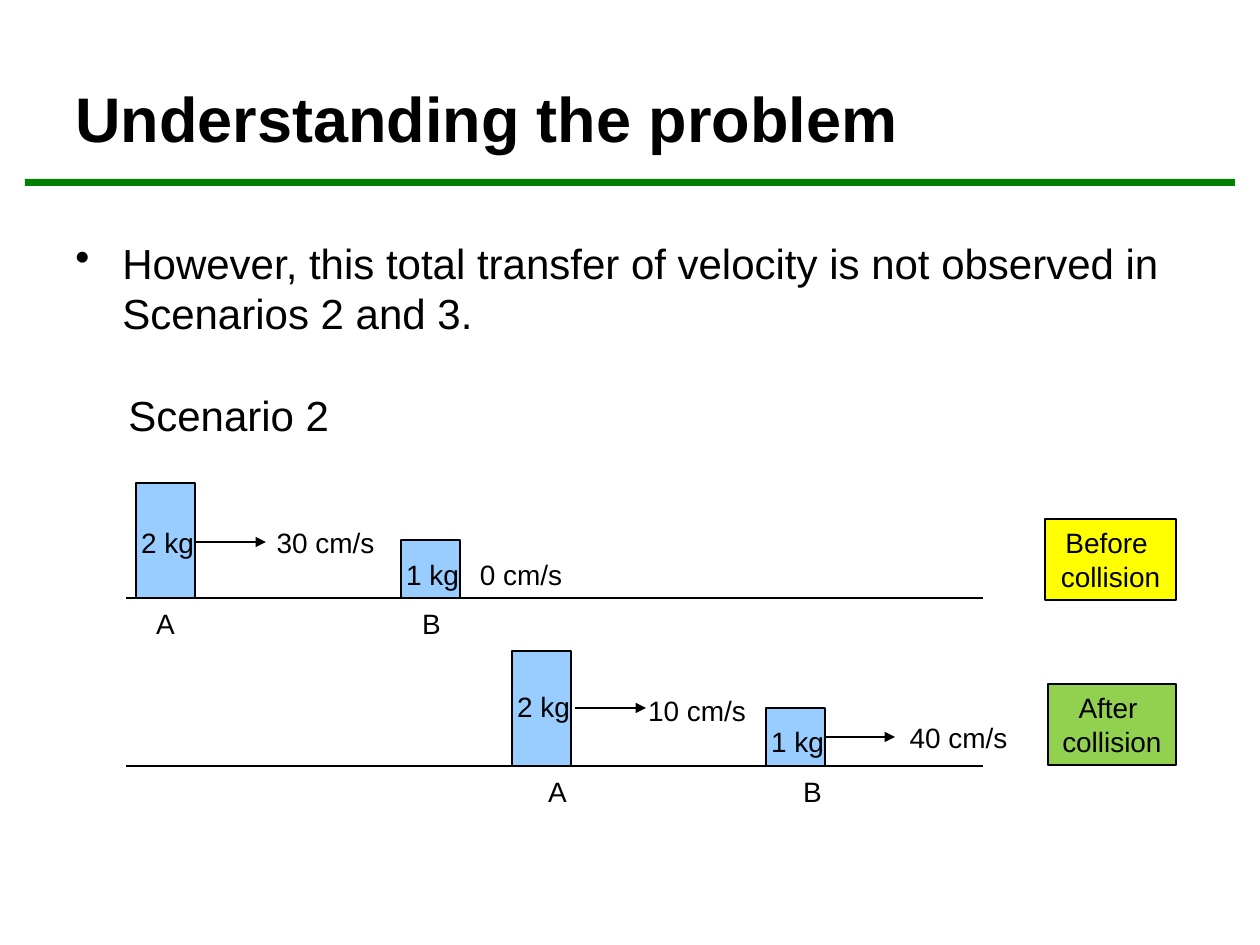
"""Build the slide on the Scenario 2 collision."""
from dataclasses import dataclass

from lxml import etree
from pptx import Presentation
from pptx import util as u
from pptx.dml.color import RGBColor
from pptx.enum import shapes, text
from pptx.oxml.ns import qn


@dataclass(frozen=True)
class Theme:
    font: str = "Arial"
    ink: str = "000000"
    rule: str = "008000"
    block: str = "99CCFF"
    before: str = "FFFF00"
    after: str = "92D050"
    title: int = 36
    body: int = 24
    label: int = 16
    line: float = 0.75


def px(n):
    return u.Emu(round(n * 914400 / 126))


def write(tf, content, theme, size, bold=False, center=False, wrap=True,
          anchor=text.MSO_ANCHOR.TOP, bullet=None, hang=0):
    tf.word_wrap = wrap
    tf.vertical_anchor = anchor
    for i, line in enumerate(content.split("\n")):
        p = tf.paragraphs[0] if i == 0 else tf.add_paragraph()
        p.alignment = text.PP_ALIGN.CENTER if center else text.PP_ALIGN.LEFT
        if bullet:
            pPr = p._p.get_or_add_pPr()
            pPr.set("marL", str(px(hang)))
            pPr.set("indent", str(-px(hang)))
            etree.SubElement(pPr, qn("a:buChar")).set("char", bullet)
        r = p.add_run()
        r.text = line
        r.font.name = theme.font
        r.font.size = u.Pt(size)
        r.font.bold = bold
        r.font.color.rgb = RGBColor.from_string(theme.ink)


class Deck:
    def __init__(self, theme):
        self.theme = theme
        self.prs = Presentation()
        self.prs.slide_width, self.prs.slide_height = px(1260), px(945)
        self.s = self.prs.slides.add_slide(self.prs.slide_layouts[6])

    def text(self, x, y, w, h, content, size, **fmt):
        sp = self.s.shapes.add_textbox(px(x), px(y), px(w), px(h))
        write(sp.text_frame, content, self.theme, size, **fmt)

    def label(self, x, y, w, h, content):
        self.text(x, y, w, h, content, self.theme.label, center=True, wrap=False)

    def rect(self, x, y, w, h, fill, outline=True):
        sp = self.s.shapes.add_shape(
            shapes.MSO_SHAPE.RECTANGLE, px(x), px(y), px(w), px(h))
        sp.shadow.inherit = False
        sp.fill.solid()
        sp.fill.fore_color.rgb = RGBColor.from_string(fill)
        if outline:
            sp.line.color.rgb = RGBColor.from_string(self.theme.ink)
            sp.line.width = u.Pt(self.theme.line)
        else:
            sp.line.fill.background()
        return sp

    def stage(self, x, y, w, h, content, fill):
        sp = self.rect(x, y, w, h, fill)
        write(sp.text_frame, content, self.theme, self.theme.label,
              center=True, wrap=False, anchor=text.MSO_ANCHOR.MIDDLE)

    def line(self, x, y, length, arrow=False):
        c = self.s.shapes.add_connector(
            shapes.MSO_CONNECTOR.STRAIGHT, px(x), px(y), px(x + length), px(y))
        c.line.color.rgb = RGBColor.from_string(self.theme.ink)
        c.line.width = u.Pt(self.theme.line)
        if arrow:
            ln = c.line._get_or_add_ln()
            etree.SubElement(ln, qn("a:tailEnd")).set("type", "triangle")
        etree.SubElement(c._element.spPr, qn("a:effectLst"))

    def block(self, ground, x, height, mass, mass_y, name, name_x):
        self.rect(x, ground - height, 59, height, self.theme.block)
        self.label(x - 8, mass_y, 79, 38, mass)
        self.label(name_x, ground + 2, 47, 55, name)


def main():
    theme = Theme()
    deck = Deck(theme)
    deck.rect(25, 179, 1210, 7, theme.rule, outline=False)
    deck.text(63, 38, 1134, 158, "Understanding the problem", theme.title,
              bold=True, anchor=text.MSO_ANCHOR.MIDDLE)
    deck.text(63, 231, 1134, 121,
              "However, this total transfer of velocity is not observed in Scenarios 2 and 3.",
              theme.body, bullet="•", hang=47)
    deck.text(116, 383, 241, 64, "Scenario 2", theme.body, wrap=False)

    before, after = 598, 766
    for ground in (before, after):
        deck.line(126, ground, 857)
    heavy, light = 115, 58
    for block in (
        (before, 136, heavy, "2 kg", 519, "A", 142),
        (before, 401, light, "1 kg", 551, "B", 408),
        (after, 512, heavy, "2 kg", 683, "A", 534),
        (after, 766, light, "1 kg", 718, "B", 789),
    ):
        deck.block(*block)
    for x, y in ((195, 542), (575, 708), (824, 737)):
        deck.line(x, y, 71, arrow=True)
    for x, y, w, speed in (
        (246, 519, 159, "30 cm/s"),
        (465, 551, 112, "0 cm/s"),
        (626, 687, 142, "10 cm/s"),
        (877, 714, 163, "40 cm/s"),
    ):
        deck.label(x, y, w, 38, speed)
    deck.stage(1045, 519, 131, 81, "Before \ncollision", theme.before)
    deck.stage(1048, 684, 128, 81, "After \ncollision", theme.after)
    deck.prs.save("out.pptx")


if __name__ == "__main__":
    main()
